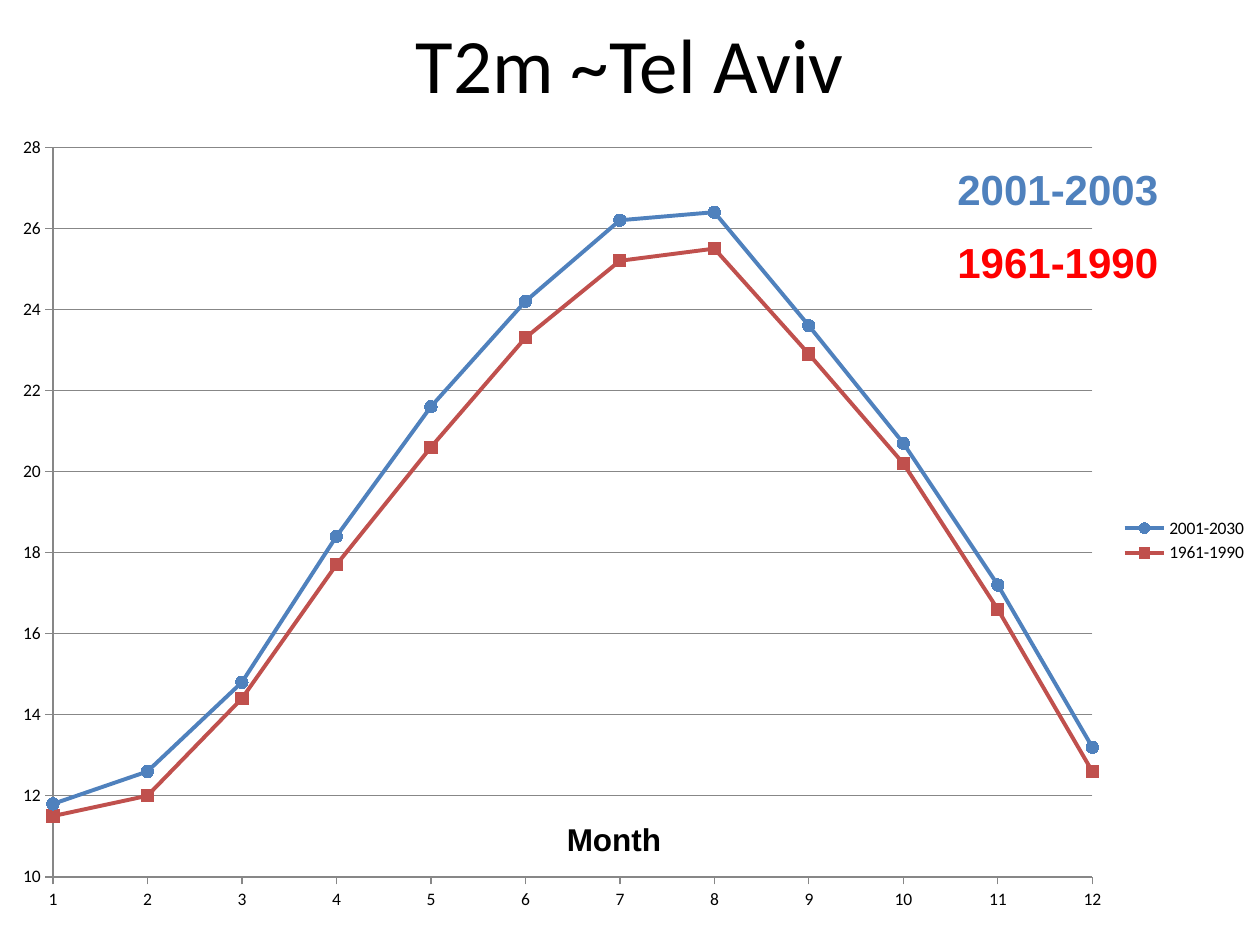
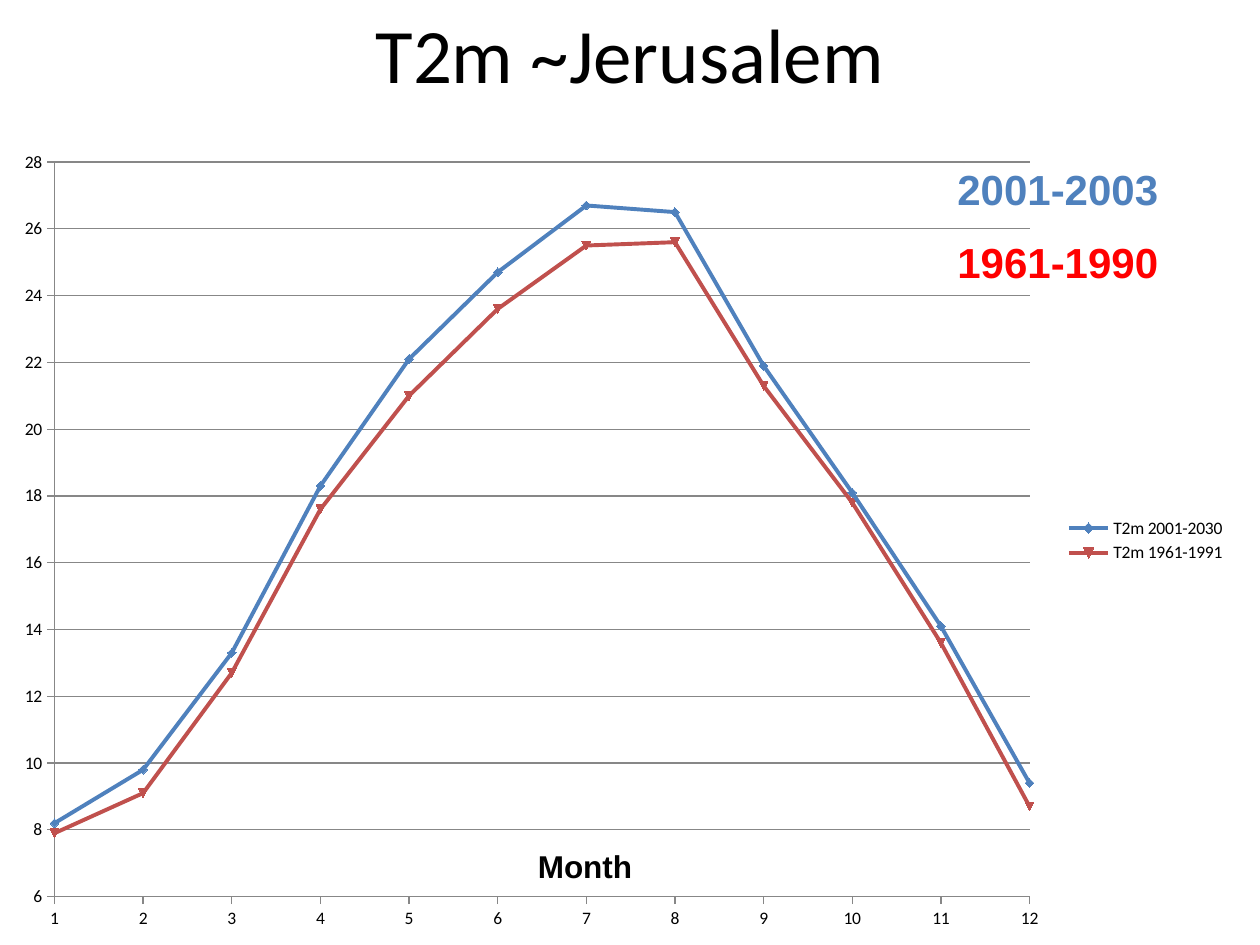
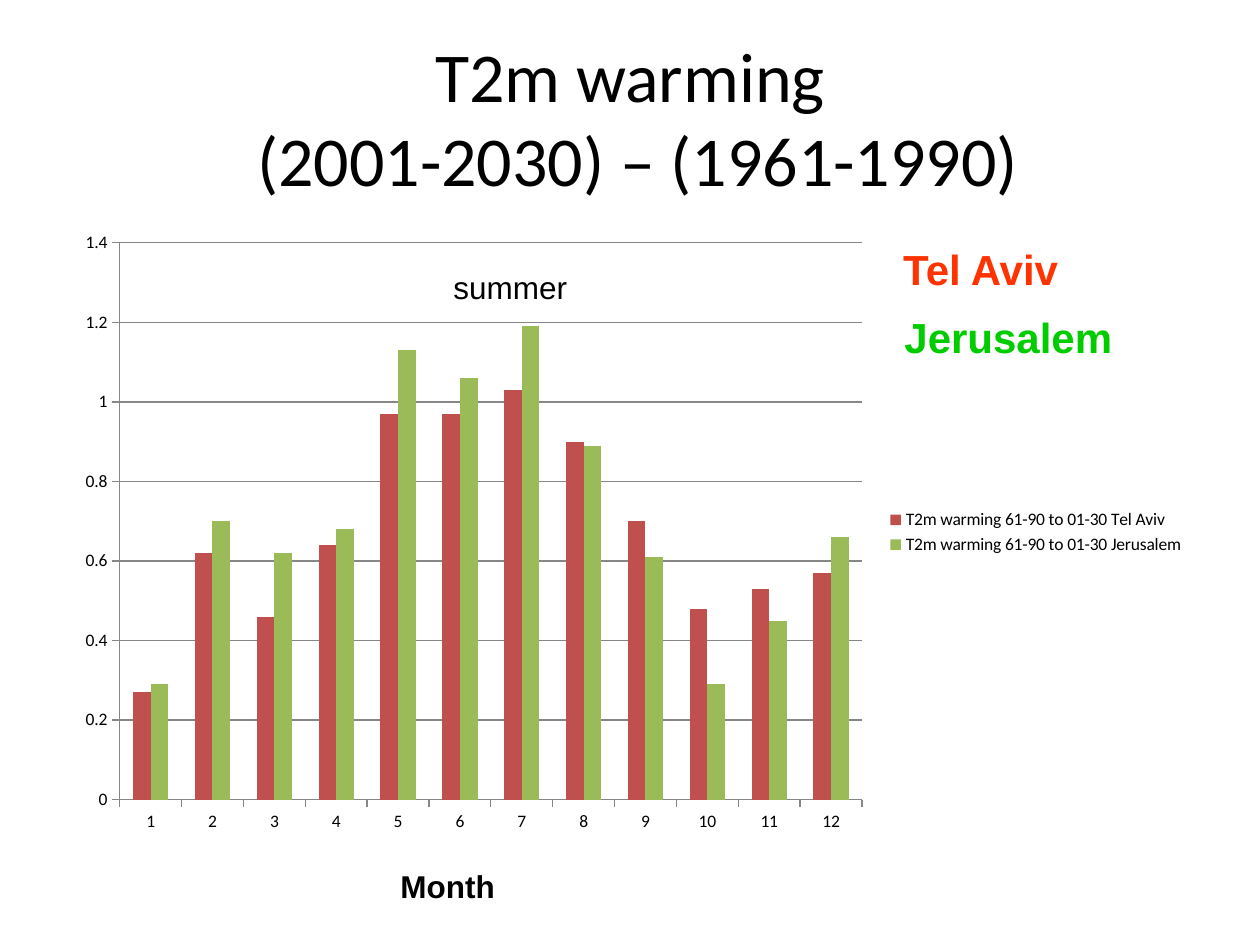
from dataclasses import dataclass

from lxml import etree
from pptx import Presentation
from pptx.chart.data import CategoryChartData, XyChartData
from pptx.dml.color import RGBColor
from pptx.enum.chart import (
    XL_CHART_TYPE, XL_LEGEND_POSITION, XL_MARKER_STYLE, XL_TICK_MARK)
from pptx.enum.text import MSO_ANCHOR, MSO_AUTO_SIZE, PP_ALIGN
from pptx.oxml.ns import qn
from pptx.util import Inches, Pt

CURVES = XL_CHART_TYPE.XY_SCATTER_SMOOTH
COLUMNS = XL_CHART_TYPE.COLUMN_CLUSTERED
LEGEND_RIGHT = XL_LEGEND_POSITION.RIGHT
TICK_OUTSIDE = XL_TICK_MARK.OUTSIDE
CIRCLE, SQUARE = XL_MARKER_STYLE.CIRCLE, XL_MARKER_STYLE.SQUARE
MIDDLE = MSO_ANCHOR.MIDDLE
GROW = MSO_AUTO_SIZE.SHAPE_TO_FIT_TEXT
CENTER = PP_ALIGN.CENTER


@dataclass(frozen=True)
class Theme:
    heading_font: str = "Calibri"
    label_font: str = "Arial"
    black: str = "000000"
    blue: str = "4F81BD"
    brick: str = "C0504D"
    olive: str = "9BBB59"
    red: str = "FF0000"
    orange: str = "FF3300"
    green: str = "00CC00"
    grid: str = "878787"
    title_size: int = 44
    long_title_size: int = 40
    period_size: int = 24
    note_size: int = 18
    chart_size: int = 10
    curve_width: float = 2.25
    grid_width: float = 0.75
    marker_size: int = 7


THEME = Theme()
MONTHS = range(1, 13)

TEL_AVIV = {
    "2001-2030": [11.8, 12.6, 14.8, 18.4, 21.6, 24.2, 26.2, 26.4, 23.6, 20.7, 17.2, 13.2],
    "1961-1990": [11.5, 12, 14.4, 17.7, 20.6, 23.3, 25.2, 25.5, 22.9, 20.2, 16.6, 12.6],
}
JERUSALEM = {
    "T2m 2001-2030": [8.2, 9.8, 13.3, 18.3, 22.1, 24.7, 26.7, 26.5, 21.9, 18.1, 14.1, 9.4],
    "T2m 1961-1991": [7.9, 9.1, 12.7, 17.6, 21, 23.6, 25.5, 25.6, 21.3, 17.8, 13.6, 8.7],
}
WARMING = {
    "T2m warming 61-90 to 01-30 Tel Aviv":
        [0.27, 0.62, 0.46, 0.64, 0.97, 0.97, 1.03, 0.9, 0.7, 0.48, 0.53, 0.57],
    "T2m warming 61-90 to 01-30 Jerusalem":
        [0.29, 0.7, 0.62, 0.68, 1.13, 1.06, 1.19, 0.89, 0.61, 0.29, 0.45, 0.66],
}


def style_font(font, name, size, color, bold=False):
    font.name = name
    font.size = Pt(size)
    font.bold = bold
    font.color.rgb = RGBColor.from_string(color)


def style_line(line, color, width):
    line.color.rgb = RGBColor.from_string(color)
    line.width = Pt(width)


def add_text(slide, box, text):
    frame = slide.shapes.add_textbox(*map(Inches, box)).text_frame
    frame.text = text
    return frame


def add_title(slide, box, text, size=THEME.title_size):
    frame = add_text(slide, box, text)
    frame.word_wrap = True
    frame.vertical_anchor = MIDDLE
    heading = frame.paragraphs[0]
    heading.alignment = CENTER
    style_font(heading.font, THEME.heading_font, size, THEME.black)


def add_label(slide, box, text, size=THEME.note_size, color=THEME.black, bold=True):
    frame = add_text(slide, box, text)
    frame.word_wrap = False
    frame.auto_size = GROW
    style_font(frame.paragraphs[0].font, THEME.label_font, size, color, bold)


def style_axis(axis, gridlines):
    axis.has_major_gridlines = gridlines
    axis.major_tick_mark = TICK_OUTSIDE
    style_line(axis.format.line, THEME.grid, THEME.grid_width)
    if gridlines:
        style_line(axis.major_gridlines.format.line, THEME.grid, THEME.grid_width)


def set_scale(axis, low, high, step):
    axis.minimum_scale = low
    axis.maximum_scale = high
    axis.major_unit = step


def add_chart(slide, box, kind, data, scale):
    chart = slide.shapes.add_chart(kind, *map(Inches, box), data).chart
    chart.has_title = False
    style_font(chart.font, THEME.heading_font, THEME.chart_size, THEME.black)
    chart.has_legend = True
    chart.legend.position = LEGEND_RIGHT
    chart.legend.include_in_layout = False
    chart.plots[0].vary_by_categories = False
    style_axis(chart.category_axis, False)
    style_axis(chart.value_axis, True)
    set_scale(chart.value_axis, *scale)
    return chart


def place_plot(chart, chart_box, plot_box):
    area = chart.plots[0]._element.getparent()
    for layout in area.findall(qn("c:layout")):
        area.remove(layout)
    layout = etree.Element(qn("c:layout"))
    area.insert(0, layout)
    manual = etree.SubElement(layout, qn("c:manualLayout"))
    width, height = chart_box[2:]
    shares = [part / whole for part, whole in zip(plot_box, (width, height) * 2)]
    settings = [("layoutTarget", "inner"), ("xMode", "edge"), ("yMode", "edge")]
    settings += zip("xywh", (f"{share:.3f}" for share in shares))
    for tag, value in settings:
        etree.SubElement(manual, qn(f"c:{tag}"), val=value)


def add_curves(slide, box, temperatures, scale, markers=()):
    data = XyChartData()
    for period, values in temperatures.items():
        curve = data.add_series(period)
        for month, value in zip(MONTHS, values):
            curve.add_data_point(month, value)
    chart = add_chart(slide, box, CURVES, data, scale)
    set_scale(chart.category_axis, 1, 12, 1)
    colors = (THEME.blue, THEME.brick)
    for curve, color in zip(chart.series, colors):
        curve.smooth = True
        style_line(curve.format.line, color, THEME.curve_width)
    for curve, color, style in zip(chart.series, colors, markers):
        curve.marker.style = style
        curve.marker.size = THEME.marker_size
        curve.marker.format.fill.solid()
        curve.marker.format.fill.fore_color.rgb = RGBColor.from_string(color)
        style_line(curve.marker.format.line, color, THEME.grid_width)
    return chart


def add_columns(slide, box, warming, scale):
    data = CategoryChartData()
    data.categories = [str(month) for month in MONTHS]
    for city, values in warming.items():
        data.add_series(city, values)
    chart = add_chart(slide, box, COLUMNS, data, scale)
    chart.plots[0].gap_width = 150
    chart.plots[0].overlap = 0
    for city, color in zip(chart.series, (THEME.brick, THEME.olive)):
        city.invert_if_negative = False
        city.format.fill.solid()
        city.format.fill.fore_color.rgb = RGBColor.from_string(color)
        city.format.line.fill.background()


def add_periods(slide, left, top):
    periods = (("2001-2003", THEME.blue), ("1961-1990", THEME.red))
    for row, (period, color) in enumerate(periods):
        add_label(slide, (left, top + 0.58 * row, 1.8, 0.5), period,
                  THEME.period_size, color)


def add_month(slide, left, top):
    add_label(slide, (left, top, 0.95, 0.4), "Month")


def build_city(slide, title, title_height, chart_box, temperatures, scale,
               month_at, markers=(), plot_box=None):
    add_title(slide, (0.5, 0, 9, title_height), title)
    chart = add_curves(slide, chart_box, temperatures, scale, markers)
    if plot_box:
        place_plot(chart, chart_box, plot_box)
    add_periods(slide, 7.5, 1.25)
    add_month(slide, *month_at)


def build_warming(slide):
    add_title(slide, (0.5, 0.3, 9, 1.25),
              "T2m warming\v (2001-2030) – (1961-1990)", THEME.long_title_size)
    add_columns(slide, (0.5, 1.75, 9, 4.95), WARMING, (0, 1.4, 0.2))
    add_label(slide, (7.07, 1.88, 1.48, 0.5), "Tel Aviv", THEME.period_size, THEME.orange)
    add_label(slide, (7.08, 2.42, 1.85, 0.5), "Jerusalem", THEME.period_size, THEME.green)
    add_label(slide, (3.5, 2.08, 1.1, 0.4), "summer", bold=False)
    add_month(slide, 3.08, 6.83)


def main():
    deck = Presentation()
    deck.slide_width, deck.slide_height = Inches(10), Inches(7.5)
    blank = deck.slide_layouts[6]
    build_city(deck.slides.add_slide(blank), "T2m ~Tel Aviv", 1,
               (0, 1.08, 10, 6.42), TEL_AVIV, (10, 28, 2), (4.4, 6.46),
               (CIRCLE, SQUARE), (0.42, 0.09, 8.25, 5.79))
    build_city(deck.slides.add_slide(blank), "T2m ~Jerusalem", 0.83,
               (0, 1.08, 9.83, 6.42), JERUSALEM, (6, 28, 2), (4.17, 6.67))
    build_warming(deck.slides.add_slide(blank))
    deck.save("out.pptx")


if __name__ == "__main__":
    main()
